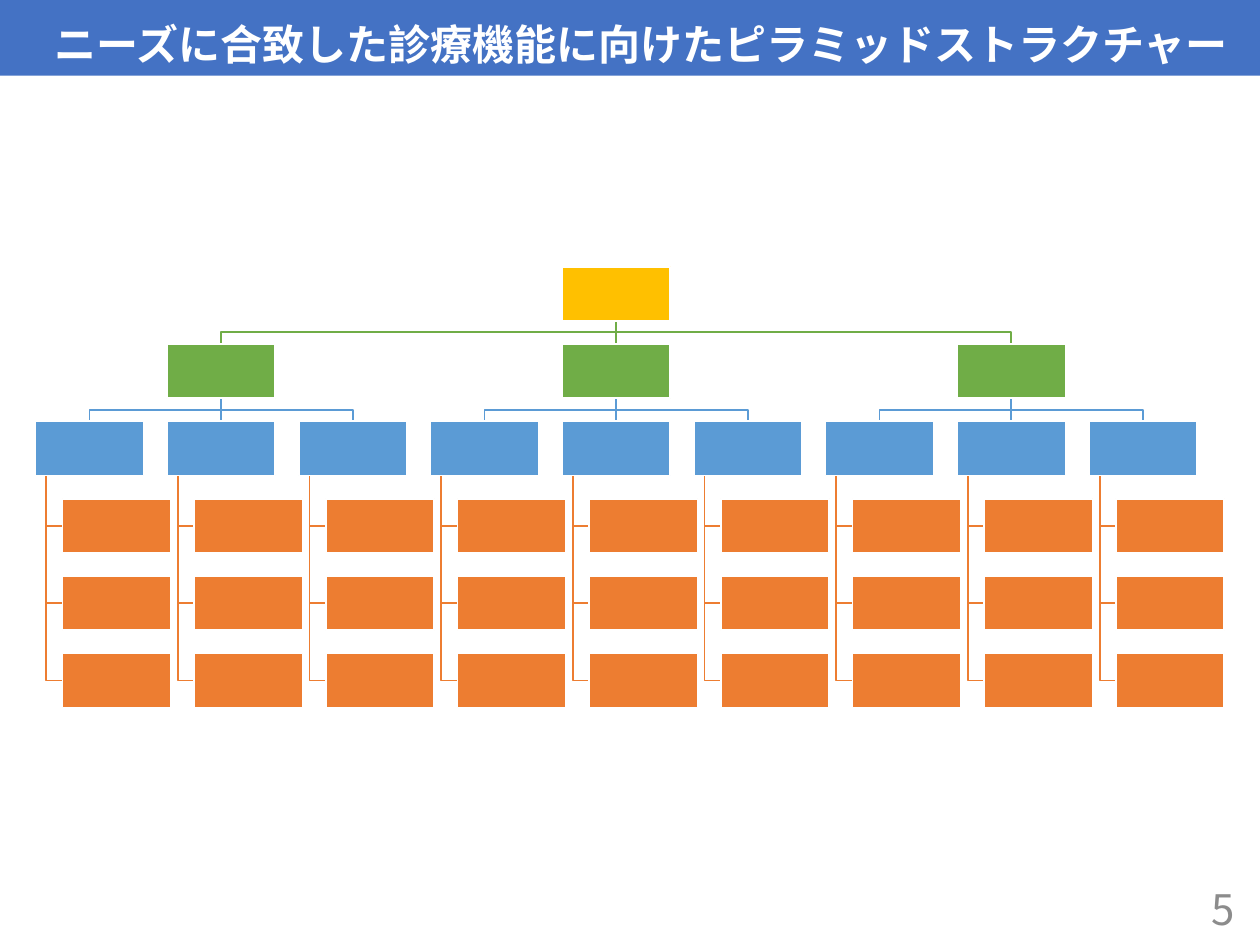
from dataclasses import dataclass

from lxml import etree
from pptx import Presentation
from pptx.dml.color import RGBColor
from pptx.enum.shapes import MSO_CONNECTOR, MSO_SHAPE
from pptx.enum.text import MSO_ANCHOR, PP_ALIGN
from pptx.oxml.ns import qn
from pptx.util import Pt

RECTANGLE = MSO_SHAPE.RECTANGLE
STRAIGHT = MSO_CONNECTOR.STRAIGHT
LEFT, RIGHT = PP_ALIGN.LEFT, PP_ALIGN.RIGHT
MIDDLE, BOTTOM = MSO_ANCHOR.MIDDLE, MSO_ANCHOR.BOTTOM


@dataclass(frozen=True)
class Theme:
    font: str = "Noto Sans CJK JP"
    banner: str = "4472C4"
    white: str = "FFFFFF"
    number: str = "8C8C8C"
    root: str = "FFC000"
    branch: str = "70AD47"
    twig: str = "5B9BD5"
    leaf: str = "ED7D31"
    text_size: float = 24
    line_width: float = 1


@dataclass(frozen=True)
class Node:
    left: float
    top: float
    color: str

    @property
    def center(self) -> float:
        return self.left + BOX_WIDTH / 2

    @property
    def middle(self) -> float:
        return self.top + BOX_HEIGHT / 2

    @property
    def bottom(self) -> float:
        return self.top + BOX_HEIGHT


THEME = Theme()
BOX_WIDTH, BOX_HEIGHT = 61.9, 30.9
TREE_LEFT, TREE_TOP = 20.2, 152.4
COLUMN_PITCH, ROW_PITCH = 75.25, 44.2
LEAF_INDENT, TRUNK_INDENT = 15.5, 6.2
GROUPS = GROUP_SIZE = LEAVES = 3


def grid_node(column: int, row: int, color: str, indent: float = 0) -> Node:
    return Node(TREE_LEFT + column * COLUMN_PITCH + indent,
                TREE_TOP + row * ROW_PITCH, color)


def rgb(color: str) -> RGBColor:
    return RGBColor.from_string(color)


def write_text(shape, text: str, *, color: str, bold: bool = False,
               align=LEFT, anchor=MIDDLE, spacing: float = 1.0) -> None:
    frame = shape.text_frame
    frame.word_wrap = True
    frame.vertical_anchor = anchor
    para = frame.paragraphs[0]
    para.alignment = align
    para.line_spacing = spacing
    span = para.add_run()
    span.text = text
    span.font.name = THEME.font
    span.font.size = Pt(THEME.text_size)
    span.font.bold = bold
    span.font.color.rgb = rgb(color)
    east_asian = etree.Element(qn("a:ea"), typeface=THEME.font)
    span.font._element.find(qn("a:latin")).addnext(east_asian)


def add_box(page, left: float, top: float, width: float, height: float,
            fill: str, outline: str | None = None):
    box = page.shapes.add_shape(RECTANGLE, Pt(left), Pt(top), Pt(width), Pt(height))
    box.shadow.inherit = False
    box.fill.solid()
    box.fill.fore_color.rgb = rgb(fill)
    if outline:
        style_line(box, outline)
    else:
        box.line.fill.background()
    return box


def style_line(shape, color: str) -> None:
    shape.line.color.rgb = rgb(color)
    shape.line.width = Pt(THEME.line_width)


def add_path(page, points: list[tuple[float, float]], color: str) -> None:
    corners = [(Pt(x), Pt(y)) for x, y in points]
    builder = page.shapes.build_freeform(*corners[0], scale=1.0)
    builder.add_line_segments(corners[1:], close=False)
    path = builder.convert_to_shape()
    path.shadow.inherit = False
    path.fill.background()
    style_line(path, color)


def link_below(page, parent: Node, child: Node) -> None:
    if parent.center == child.center:
        stem = page.shapes.add_connector(STRAIGHT, Pt(parent.center), Pt(parent.bottom),
                                         Pt(child.center), Pt(child.top))
        etree.SubElement(stem._element.spPr, qn("a:effectLst"))
        style_line(stem, child.color)
        return
    turn = (parent.bottom + child.top) / 2
    add_path(page, [(parent.center, parent.bottom), (parent.center, turn),
                    (child.center, turn), (child.center, child.top)], child.color)


def link_beside(page, parent: Node, child: Node) -> None:
    trunk = parent.left + TRUNK_INDENT
    add_path(page, [(trunk, parent.bottom), (trunk, child.middle),
                    (child.left, child.middle)], child.color)


def draw_tree(page) -> None:
    columns = GROUPS * GROUP_SIZE
    root = grid_node(columns // 2, 0, THEME.root)
    nodes = [root]
    for group in range(GROUPS):
        first = group * GROUP_SIZE
        branch = grid_node(first + GROUP_SIZE // 2, 1, THEME.branch)
        nodes.append(branch)
        link_below(page, root, branch)
        for column in range(first, first + GROUP_SIZE):
            twig = grid_node(column, 2, THEME.twig)
            nodes.append(twig)
            link_below(page, branch, twig)
            for level in range(LEAVES):
                leaf = grid_node(column, 3 + level, THEME.leaf, LEAF_INDENT)
                nodes.append(leaf)
                link_beside(page, twig, leaf)
    for node in nodes:
        add_box(page, node.left, node.top, BOX_WIDTH, BOX_HEIGHT, node.color, THEME.white)


def main() -> None:
    deck = Presentation()
    deck.slide_width, deck.slide_height = Pt(720), Pt(540)
    page = deck.slides.add_slide(deck.slide_layouts[6])
    banner = add_box(page, 0, 0, 720, 43.2, THEME.banner)
    write_text(banner, "　ニーズに合致した診療機能に向けたピラミッドストラクチャー",
               color=THEME.white, bold=True, anchor=BOTTOM, spacing=0.9)
    number = page.shapes.add_textbox(Pt(550.8), Pt(504.7), Pt(162), Pt(28.8))
    write_text(number, "5", color=THEME.number, align=RIGHT)
    draw_tree(page)
    deck.save("out.pptx")


if __name__ == "__main__":
    main()
